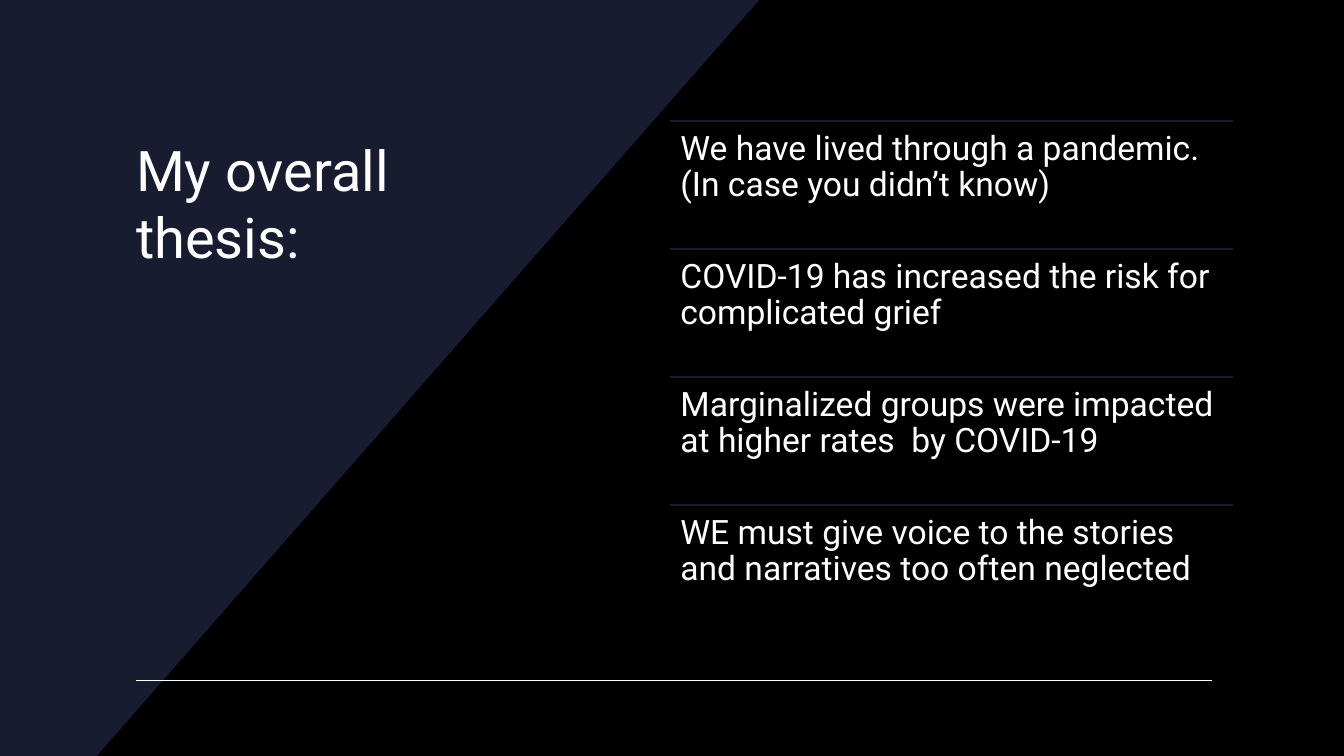
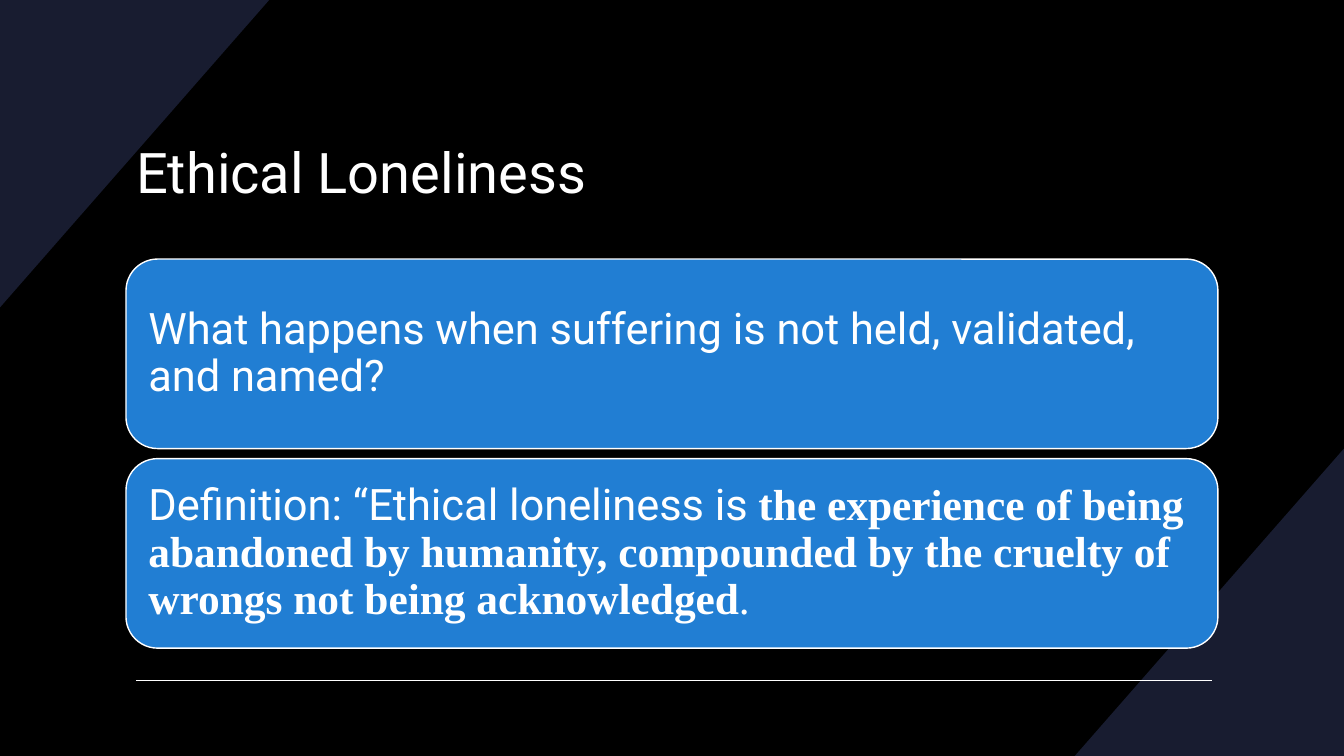
"""Build two dark slides on pandemic grief: a thesis list and a definition."""
from lxml.etree import SubElement
from pptx import Presentation
from pptx.dml.color import RGBColor
from pptx.enum.shapes import MSO_CONNECTOR, MSO_SHAPE
from pptx.enum.text import MSO_ANCHOR as Anchor, MSO_AUTO_SIZE as AutoSize, PP_ALIGN as Align
from pptx.oxml.ns import qn
from pptx.util import Inches, Pt


def color(hex_code):
    return RGBColor.from_string(hex_code)


def write(frame, runs, size, inset, anchor, spacing):
    frame_format = {
        "word_wrap": True, "auto_size": AutoSize.NONE, "vertical_anchor": anchor,
        "margin_left": Inches(inset[0]), "margin_right": Inches(inset[0]),
        "margin_top": Inches(inset[1]), "margin_bottom": Inches(inset[1]),
    }
    for name, value in frame_format.items():
        setattr(frame, name, value)
    paragraph = frame.paragraphs[0]
    paragraph.alignment = Align.LEFT
    paragraph.line_spacing = spacing
    for text, face, bold in runs:
        run = paragraph.add_run()
        run.text = text
        for name, value in {"name": face, "size": Pt(size), "bold": bold}.items():
            setattr(run.font, name, value)
        run.font.color.rgb = color(WHITE)


BLACK, WHITE, NAVY, BLUE = "000000", "FFFFFF", "181C30", "217ED3"
SANS, SERIF = "Roboto", "Times New Roman"
WIDTH, HEIGHT = 13.33, 7.5
LIST_LEFT, LIST_TOP, LIST_WIDTH, ROW_HEIGHT = 6.65, 1.2, 5.58, 1.27
CARD_LEFT, CARD_TOP, CARD_WIDTH, CARD_HEIGHT, CARD_GAP = 1.25, 2.57, 10.83, 1.88, 0.1

thesis_points = [
    "We have lived through a pandemic.  (In case you didn’t know)",
    "COVID-19 has increased the risk for complicated grief",
    "Marginalized groups were impacted at higher rates  by COVID-19",
    "WE must give voice to the stories and narratives too often neglected",
]
definition_cards = [
    [("What happens when suffering is not held, validated, and named?", SANS, False)],
    [
        ("Definition: “Ethical loneliness is ", SANS, False),
        ("the experience of being abandoned by humanity, compounded by the cruelty of "
         "wrongs not being acknowledged", SERIF, True),
        (".", SERIF, False),
    ],
]
footer_rule = (1.35, 6.75, 12.02, WHITE)
row_tops = [LIST_TOP + ROW_HEIGHT * row for row in range(len(thesis_points))]
row_rules = [(LIST_LEFT, top, LIST_LEFT + LIST_WIDTH, NAVY) for top in row_tops]
pages = [
    {
        "title": "My overall thesis:", "box": (1.25, 1.29, 3.86, 1.71), "anchor": Anchor.TOP,
        "wedges": [[(0, 0), (7.53, 0), (0.96, HEIGHT), (0, HEIGHT)]],
        "rules": [footer_rule] + row_rules,
    },
    {
        "title": "Ethical Loneliness", "box": (1.25, 0.95, 10.83, 1.49), "anchor": Anchor.MIDDLE,
        "wedges": [
            [(0, 0), (2.67, 0), (0, 3.05)],
            [(WIDTH, HEIGHT), (WIDTH - 2.67, HEIGHT), (WIDTH, HEIGHT - 3.05)],
        ],
        "rules": [footer_rule],
    },
]

deck = Presentation()
deck.slide_width, deck.slide_height = Inches(WIDTH), Inches(HEIGHT)
backdrop = deck.slide_master.background.fill
backdrop.solid()
backdrop.fore_color.rgb = color(BLACK)

slides = []
for page in pages:
    slide = deck.slides.add_slide(deck.slide_layouts[5])
    slides.append(slide)
    title = slide.shapes.title
    for name, value in zip(("left", "top", "width", "height"), page["box"]):
        setattr(title, name, Inches(value))
    write(title.text_frame, [(page["title"], SANS, False)], 40, (0.1, 0.05), page["anchor"], 1.0)

    for corners in page["wedges"]:
        start, *others = [(Inches(x), Inches(y)) for x, y in corners]
        outline = slide.shapes.build_freeform(*start)
        outline.add_line_segments(others, close=True)
        wedge = outline.convert_to_shape()
        wedge.shadow.inherit = False
        wedge.fill.solid()
        wedge.fill.fore_color.rgb = color(NAVY)
        wedge.line.fill.background()
        title.element.addprevious(wedge.element)

    for left, top, right, shade in page["rules"]:
        rule = slide.shapes.add_connector(
            MSO_CONNECTOR.STRAIGHT, Inches(left), Inches(top), Inches(right), Inches(top))
        rule.line.color.rgb = color(shade)
        rule.line.width = Pt(1)
        SubElement(rule.element.spPr, qn("a:effectLst"))

thesis_slide, definition_slide = slides
for point, top in zip(thesis_points, row_tops):
    row = thesis_slide.shapes.add_textbox(
        Inches(LIST_LEFT), Inches(top), Inches(LIST_WIDTH), Inches(ROW_HEIGHT))
    write(row.text_frame, [(point, SANS, False)], 24, (0.1, 0.1), Anchor.TOP, 0.9)

for position, runs in enumerate(definition_cards):
    card = definition_slide.shapes.add_shape(
        MSO_SHAPE.ROUNDED_RECTANGLE, Inches(CARD_LEFT),
        Inches(CARD_TOP + position * (CARD_HEIGHT + CARD_GAP)),
        Inches(CARD_WIDTH), Inches(CARD_HEIGHT))
    card.shadow.inherit = False
    card.fill.solid()
    card.fill.fore_color.rgb = color(BLUE)
    card.line.color.rgb = color(WHITE)
    card.line.width = Pt(1)
    write(card.text_frame, runs, 31, (0.13, 0.13), Anchor.MIDDLE, 0.9)

deck.save("out.pptx")
